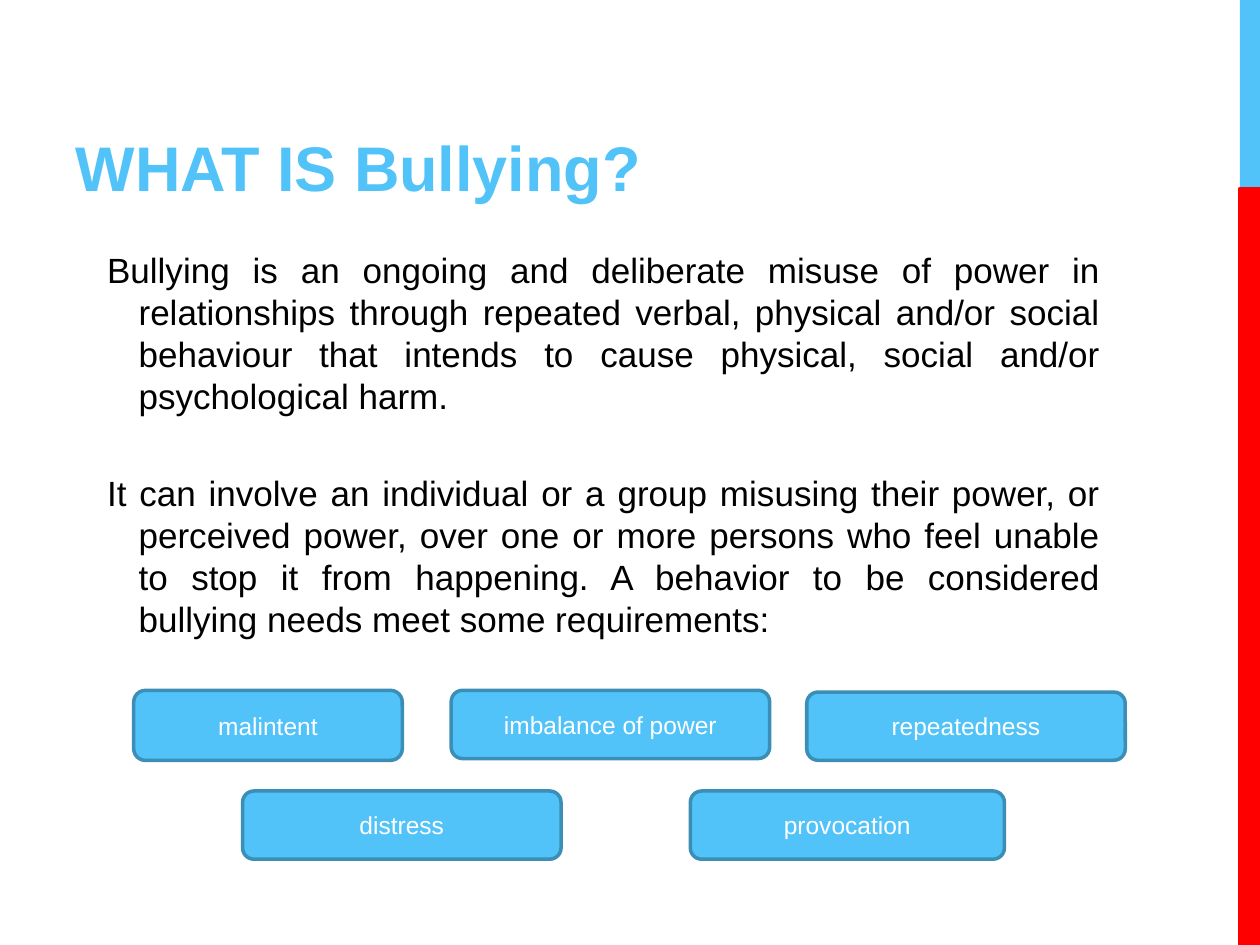
from dataclasses import dataclass

from pptx import Presentation
from pptx.dml.color import RGBColor
from pptx.enum.shapes import MSO_SHAPE
from pptx.enum.text import MSO_ANCHOR, MSO_AUTO_SIZE, PP_ALIGN
from pptx.oxml.ns import qn
from pptx.slide import Slide
from pptx.util import Pt

RECTANGLE, ROUNDED = MSO_SHAPE.RECTANGLE, MSO_SHAPE.ROUNDED_RECTANGLE
MIDDLE, BOTTOM = MSO_ANCHOR.MIDDLE, MSO_ANCHOR.BOTTOM
LEFT, CENTER, JUSTIFY = PP_ALIGN.LEFT, PP_ALIGN.CENTER, PP_ALIGN.JUSTIFY
NO_AUTOFIT = MSO_AUTO_SIZE.NONE

SKY, STEEL, RED, BLACK, WHITE = "51C3F9", "3B8EB5", "FF0000", "000000", "FFFFFF"
FONT = "Arial"
SLIDE_WIDTH, SLIDE_HEIGHT = 720, 540
BAR_LEFT, BAR_SPLIT = 708.5, 108
PILL_HEIGHT = 39

DEFINITION = [
    "Bullying is an ongoing and deliberate misuse of power in relationships "
    "through repeated verbal, physical and/or social behaviour that intends to "
    "cause physical, social and/or psychological harm.",
    "It can involve an individual or a group misusing their power, or perceived "
    "power, over one or more persons who feel unable to stop it from happening. "
    "A behavior to be considered bullying needs meet some requirements:",
]


@dataclass
class Requirement:
    label: str
    left: float
    top: float
    width: float
    height: float = PILL_HEIGHT


REQUIREMENTS = [
    Requirement("malintent", 76.4, 394.5, 153.5, 40),
    Requirement("imbalance of power", 257.8, 394.5, 182),
    Requirement("repeatedness", 461, 395.5, 182),
    Requirement("distress", 138.6, 452, 182),
    Requirement("provocation", 394.5, 452, 179.5),
]


def rgb(color: str) -> RGBColor:
    return RGBColor.from_string(color)


def style_paragraph(paragraph, size: float, color: str, align, bold: bool = False) -> None:
    paragraph.alignment = align
    font = paragraph.font
    font.name, font.size, font.bold = FONT, Pt(size), bold
    font.color.rgb = rgb(color)


def place(shape, left: float, top: float, width: float, height: float) -> None:
    shape.left, shape.top = Pt(left), Pt(top)
    shape.width, shape.height = Pt(width), Pt(height)


def add_block(slide: Slide, kind, left: float, top: float, width: float,
              height: float, fill: str, line: str = "", line_width: float = 0):
    block = slide.shapes.add_shape(kind, Pt(left), Pt(top), Pt(width), Pt(height))
    block.shadow.inherit = False
    block.fill.solid()
    block.fill.fore_color.rgb = rgb(fill)
    if line:
        block.line.color.rgb = rgb(line)
        block.line.width = Pt(line_width)
    else:
        block.line.fill.background()
    return block


def add_side_bars(slide: Slide) -> None:
    width = SLIDE_WIDTH - BAR_LEFT
    add_block(slide, RECTANGLE, BAR_LEFT, 0, width, BAR_SPLIT, SKY)
    add_block(slide, RECTANGLE, BAR_LEFT, BAR_SPLIT, width,
              SLIDE_HEIGHT - BAR_SPLIT, RED, RED, 2.25)


def fill_title(slide: Slide) -> None:
    title = slide.shapes.title
    place(title, 36, 12, 456, 108)
    frame = title.text_frame
    frame.text = "WHAT IS Bullying?"
    frame.auto_size, frame.vertical_anchor = NO_AUTOFIT, BOTTOM
    style_paragraph(frame.paragraphs[0], 36, SKY, LEFT, bold=True)


def fill_definition(slide: Slide) -> None:
    body = slide.placeholders[1]
    place(body, 36, 138.5, 600, 344)
    frame = body.text_frame
    frame.text = "\n".join(DEFINITION)
    frame.auto_size = NO_AUTOFIT
    for index, paragraph in enumerate(frame.paragraphs):
        properties = paragraph._p.get_or_add_pPr()
        properties.set("marL", str(Pt(36)))
        properties.set("indent", str(Pt(-18)))
        properties.append(properties.makeelement(qn("a:buNone"), {}))
        paragraph.line_spacing = Pt(24)
        paragraph.space_before = Pt(31.2 if index else 0)
        style_paragraph(paragraph, 20, BLACK, JUSTIFY)


def add_requirement(slide: Slide, item: Requirement) -> None:
    pill = add_block(slide, ROUNDED, item.left, item.top, item.width, item.height,
                     SKY, STEEL, 2)
    frame = pill.text_frame
    frame.text = item.label
    frame.word_wrap, frame.vertical_anchor = True, MIDDLE
    style_paragraph(frame.paragraphs[0], 14, WHITE, CENTER)


def main() -> None:
    presentation = Presentation()
    presentation.slide_width, presentation.slide_height = Pt(SLIDE_WIDTH), Pt(SLIDE_HEIGHT)
    slide = presentation.slides.add_slide(presentation.slide_layouts[1])
    add_side_bars(slide)
    fill_title(slide)
    fill_definition(slide)
    for item in REQUIREMENTS:
        add_requirement(slide, item)
    presentation.save("out.pptx")


if __name__ == "__main__":
    main()
